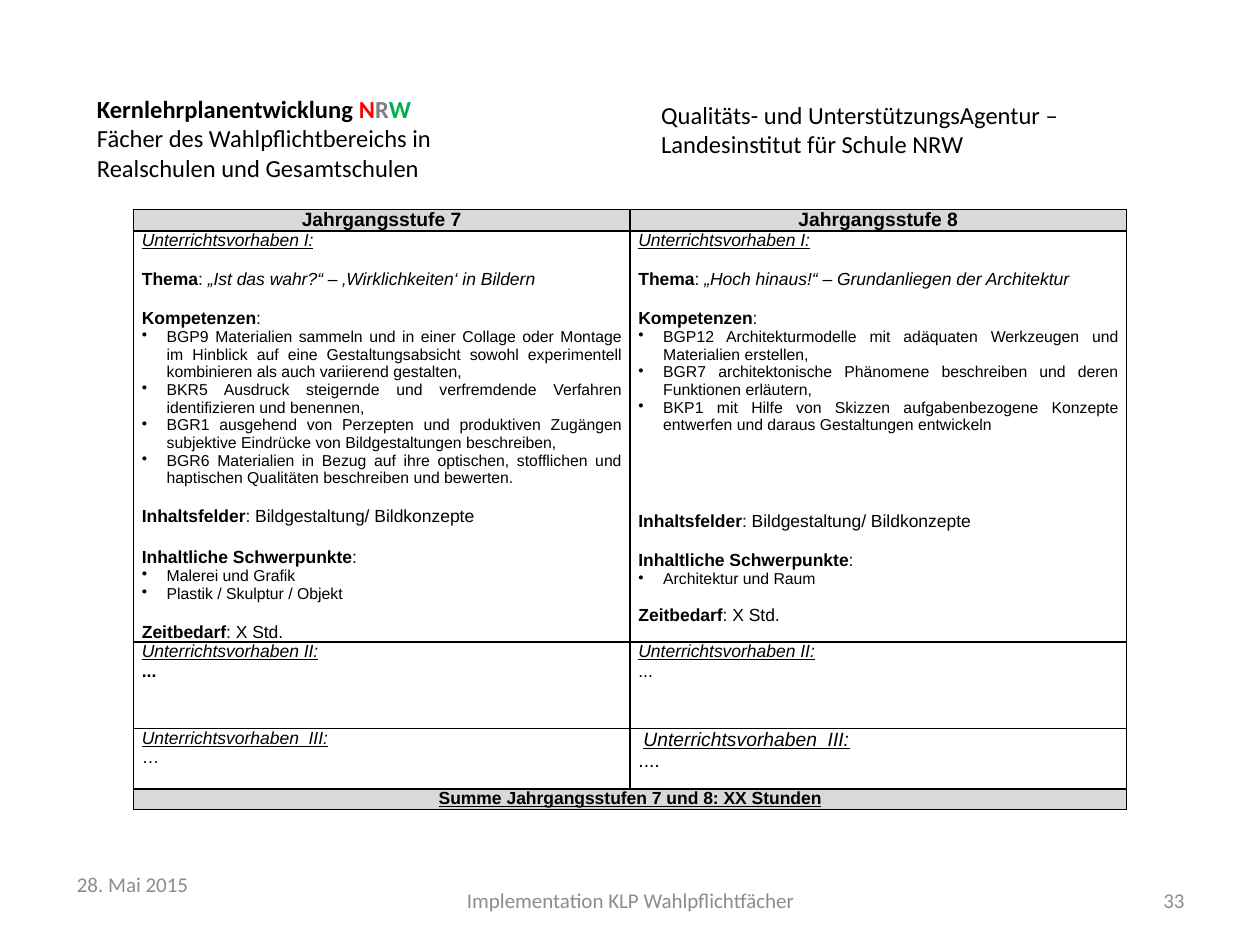
from lxml import etree
from pptx import Presentation
from pptx.dml.color import RGBColor
from pptx.enum import text as t
from pptx.oxml import ns
from pptx.util import Cm, Pt

BLACK, GREY, SHADE = "000000", "8C8C8C", "D9D9D9"
LEFT, CENTER, RIGHT, JUSTIFY = (
    t.PP_ALIGN.LEFT, t.PP_ALIGN.CENTER, t.PP_ALIGN.RIGHT, t.PP_ALIGN.JUSTIFY)
GAP = 11.1  # one line of 10 pt text

# Content: page headings and footer
HEADING = [
    [("Kernlehrplanentwicklung ", BLACK), ("N", "FF0000"), ("R", "7F7F7F"), ("W", "00B050")],
    [("Fächer des Wahlpflichtbereichs in", BLACK)],
    [("Realschulen und Gesamtschulen", BLACK)],
]
AGENCY = ["Qualitäts- und UnterstützungsAgentur –", "Landesinstitut für Schule NRW"]
FOOTER = [  # text, left, top, width, alignment
    ("28. Mai 2015", 1.3, 17.32, 5.92, LEFT),
    ("Implementation KLP Wahlpflichtfächer", 8.69, 17.65, 8.05, CENTER),
    ("33", 18.21, 17.65, 5.92, RIGHT),
]

# Content: one dict per school year; gaps are points above a line
YEARS = [
    {
        "title": "Jahrgangsstufe 7",
        "topic": "„Ist das wahr?“ – ‚Wirklichkeiten‘ in Bildern",
        "skills": [
            "BGP9 Materialien sammeln und in einer Collage oder Montage im Hinblick auf eine "
            "Gestaltungsabsicht sowohl experimentell kombinieren als auch variierend gestalten,",
            "BKR5 Ausdruck steigernde und verfremdende Verfahren identifizieren und benennen,",
            "BGR1 ausgehend von Perzepten und produktiven Zugängen subjektive Eindrücke von "
            "Bildgestaltungen beschreiben,",
            "BGR6 Materialien in Bezug auf ihre optischen, stofflichen und haptischen "
            "Qualitäten beschreiben und bewerten.",
        ],
        "focus": ["Malerei und Grafik", "Plastik / Skulptur / Objekt"],
        "gaps": {"fields": GAP, "focus": 12.4, "time": GAP},
        "second": {"dots": "...", "bold": True},
        "third": {"dots": "…", "size": 10, "indent": 0},
    },
    {
        "title": "Jahrgangsstufe 8",
        "topic": "„Hoch hinaus!“ – Grundanliegen der Architektur",
        "skills": [
            "BGP12 Architekturmodelle mit adäquaten Werkzeugen und Materialien erstellen,",
            "BGR7 architektonische Phänomene beschreiben und deren Funktionen erläutern,",
            "BKP1 mit Hilfe von Skizzen aufgabenbezogene Konzepte entwerfen und daraus "
            "Gestaltungen entwickeln",
        ],
        "focus": ["Architektur und Raum"],
        "gaps": {"fields": 4 * GAP, "focus": GAP, "time": 10},
        "second": {"dots": "...", "bold": False},
        "third": {"dots": "....", "size": 11, "indent": 0.1},
    },
]
TOTAL = "Summe Jahrgangsstufen 7 und 8: XX Stunden"
ROW_HEIGHTS = [0.42, 8.28, 1.75, 1.22, 0.41]
COL_WIDTH = 10.01


def rgb(color):
    return RGBColor.from_string(color)


def write(p, text, size=10, font="Arial", color=BLACK, bold=False, italic=False, underline=False):
    r = p.add_run()
    r.text = text
    f = r.font
    f.size, f.name, f.bold, f.italic, f.underline = Pt(size), font, bold, italic, underline
    f.color.rgb = rgb(color)


def new_line(tf, align=JUSTIFY, before=0):
    """Use the empty first paragraph, or add one."""
    p = tf.paragraphs[0]
    if p.runs:
        p = tf.add_paragraph()
    p.alignment = align
    if before:
        p.space_before = Pt(before)
    return p


def add_bullets(tf, items):
    for item in items:
        p = new_line(tf)
        pPr = p._p.get_or_add_pPr()
        pPr.set("marL", str(Cm(0.5)))
        pPr.set("indent", str(-Cm(0.5)))
        etree.SubElement(pPr, ns.qn("a:buChar"), char="•")
        write(p, item, size=9)


def labelled(tf, label, value, before, **fmt):
    p = new_line(tf, before=before)
    write(p, label, bold=True)
    write(p, ":")
    if value:
        write(p, " " + value, **fmt)


def unit_heading(tf, text, size=10, indent=0):
    p = new_line(tf)
    if indent:
        p._p.get_or_add_pPr().set("marL", str(Cm(indent)))
    write(p, text, size=size, italic=True, underline=True)


def style_cell(cell, shaded):
    cell.margin_left = cell.margin_right = Cm(0.17)
    cell.margin_top = cell.margin_bottom = 0
    tcPr = cell._tc.get_or_add_tcPr()
    for side in ("lnL", "lnR", "lnT", "lnB"):
        ln = etree.SubElement(tcPr, ns.qn("a:" + side), w=str(Pt(1)))
        fill = etree.SubElement(ln, ns.qn("a:solidFill"))
        etree.SubElement(fill, ns.qn("a:srgbClr"), val=BLACK)
    if shaded:
        cell.fill.solid()
        cell.fill.fore_color.rgb = rgb(SHADE)
    else:
        cell.fill.background()


def place(sp, left, top, width, height):
    sp.left, sp.top, sp.width, sp.height = Cm(left), Cm(top), Cm(width), Cm(height)
    tf = sp.text_frame
    tf.word_wrap = True
    tf.auto_size = t.MSO_AUTO_SIZE.NONE
    tf.vertical_anchor = t.MSO_ANCHOR.MIDDLE
    return tf


prs = Presentation()
prs.slide_width, prs.slide_height = Cm(25.4), Cm(19.05)
s = prs.slides.add_slide(prs.slide_layouts[5])

# Headings
tf = place(s.shapes.title, 1.7, 1.19, 8.61, 3.18)
for i, runs in enumerate(HEADING):
    p = new_line(tf, LEFT)
    for text, color in runs:
        write(p, text, size=14, font="Calibri", color=color, bold=i == 0)

tf = place(s.shapes.add_textbox(0, 0, 0, 0), 13.08, 1.02, 8.64, 3.18)
for text in AGENCY:
    write(new_line(tf, LEFT), text, size=14, font="Calibri")

# Table frame
rows = len(ROW_HEIGHTS)
table = s.shapes.add_table(rows, len(YEARS), Cm(2.69), Cm(4.22), Cm(COL_WIDTH * len(YEARS)),
                           Cm(sum(ROW_HEIGHTS))).table
for col in table.columns:
    col.width = Cm(COL_WIDTH)
for i, height in enumerate(ROW_HEIGHTS):
    table.rows[i].height = Cm(height)
    for cell in table.rows[i].cells:
        style_cell(cell, shaded=i in (0, rows - 1))

# Table content, one column per school year
for col, year in enumerate(YEARS):
    head, first, second, third = (table.cell(row, col).text_frame for row in range(4))
    gaps = year["gaps"]
    write(new_line(head, CENTER), year["title"], size=11, bold=True)

    unit_heading(first, "Unterrichtsvorhaben I:")
    labelled(first, "Thema", year["topic"], GAP, italic=True)
    labelled(first, "Kompetenzen", "", GAP)
    add_bullets(first, year["skills"])
    labelled(first, "Inhaltsfelder", "Bildgestaltung/ Bildkonzepte", gaps["fields"])
    labelled(first, "Inhaltliche Schwerpunkte", "", gaps["focus"])
    add_bullets(first, year["focus"])
    labelled(first, "Zeitbedarf", "X Std.", gaps["time"])

    unit_heading(second, "Unterrichtsvorhaben II:")
    write(new_line(second), year["second"]["dots"], bold=year["second"]["bold"])

    size = year["third"]["size"]
    unit_heading(third, "Unterrichtsvorhaben  III:", size, year["third"]["indent"])
    write(new_line(third), year["third"]["dots"], size=size)

# Total row
total = table.cell(rows - 1, 0)
total.merge(table.cell(rows - 1, len(YEARS) - 1))
write(new_line(total.text_frame, CENTER), TOTAL, bold=True, underline=True)

# Footer
for text, left, top, width, align in FOOTER:
    tf = place(s.shapes.add_textbox(0, 0, 0, 0), left, top, width, 1.01)
    write(new_line(tf, align), text, size=12, font="Calibri", color=GREY)

prs.save("out.pptx")
